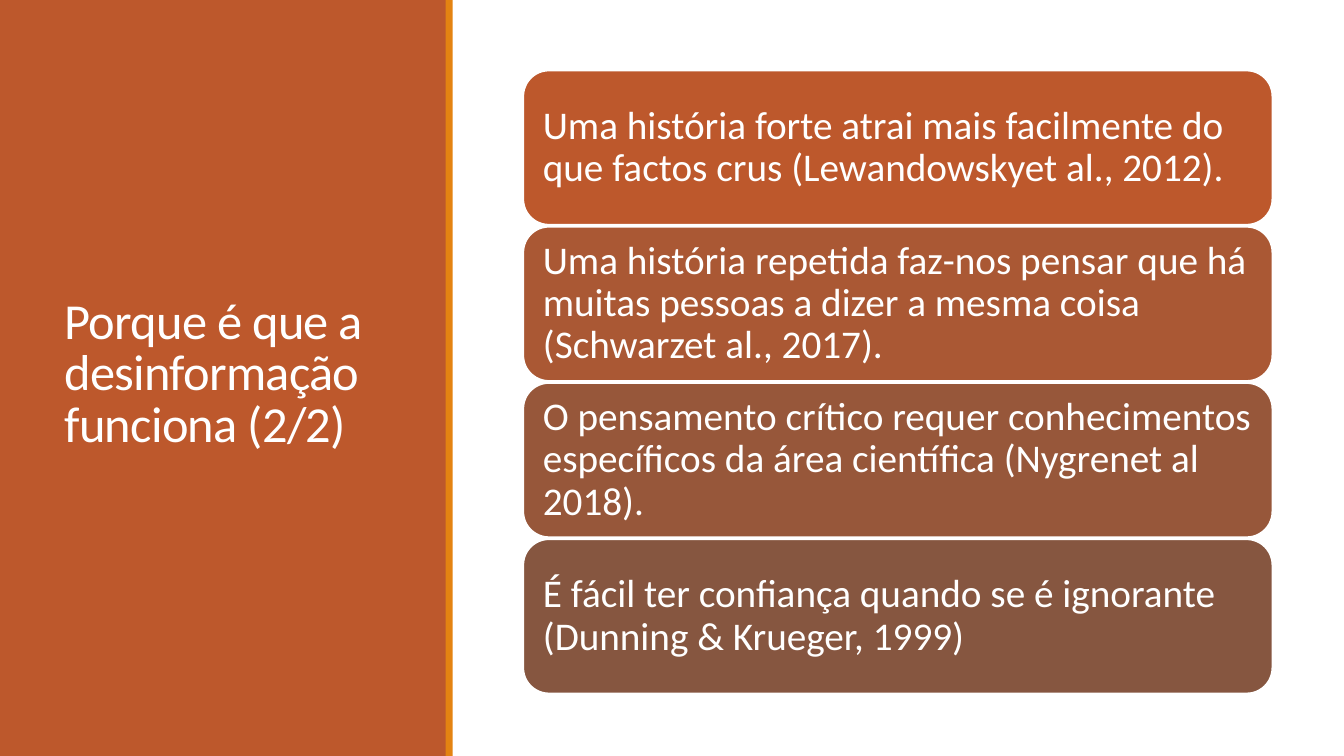
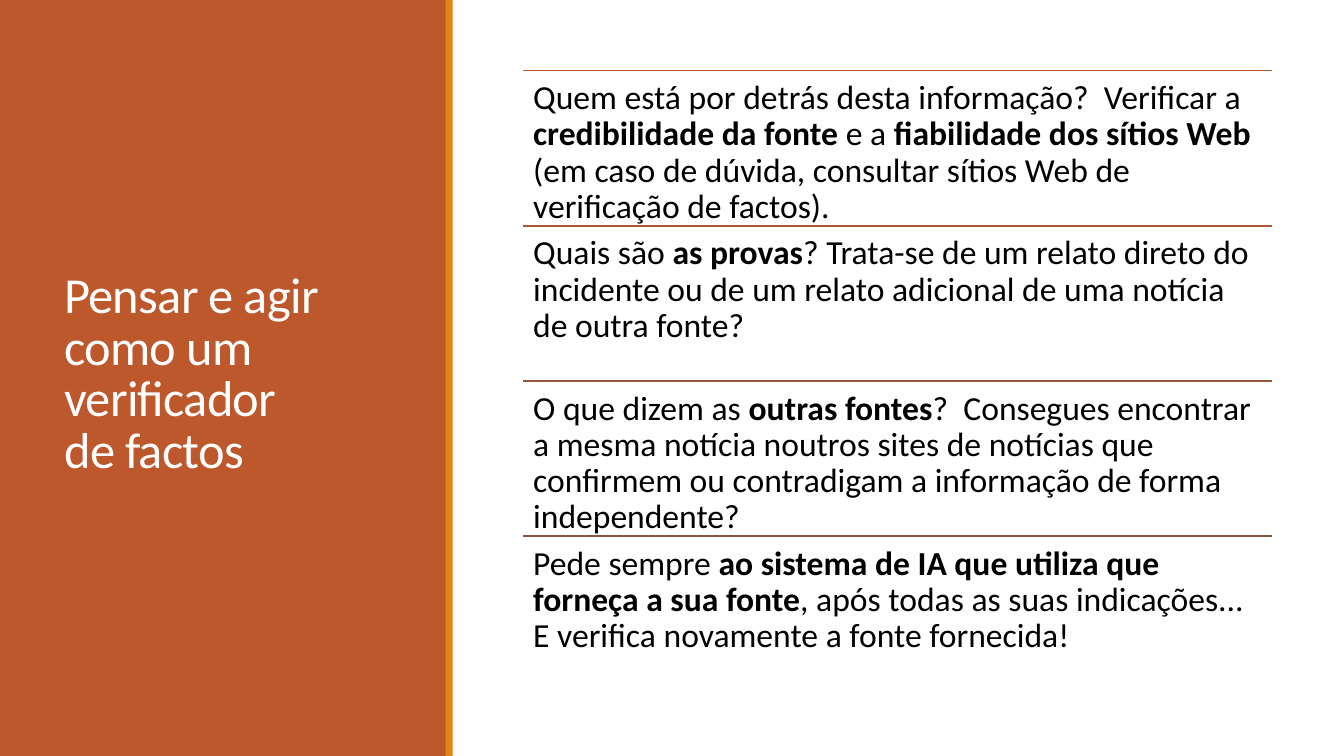
import pptx
import pptx.util
import pptx.dml.color
import pptx.enum.shapes
import pptx.enum.text
import lxml.etree

Inches = pptx.util.Inches
Pt = pptx.util.Pt
SHAPES = pptx.enum.shapes.MSO_SHAPE
ANCHORS = pptx.enum.text.MSO_ANCHOR

FONT = "Calibri"
WHITE, BLACK, RUST, ORANGE = "FFFFFF", "000000", "BD582C", "E48312"
ROW_COLORS = [RUST, "AA5834", "97573A", "865640"]
SLIDE_W, SLIDE_H = 13.33, 7.5
PANEL_W, STRIPE_W = 4.43, 0.07
ROWS_LEFT, ROWS_TOP, ROWS_W = 5.19, 0.7, 7.43
CARD_H, CARD_STEP = 1.53, 1.55
QUESTION_H = 1.54

REASONS_TITLE = ["Porque é que a desinformação funciona (2/2)"]
REASONS = [
    "Uma história forte atrai mais facilmente do que factos crus (Lewandowskyet al., 2012).",
    "Uma história repetida faz-nos pensar que há muitas pessoas a dizer a mesma coisa (Schwarzet al., 2017).",
    "O pensamento crítico requer conhecimentos específicos da área científica (Nygrenet al 2018).",
    "É fácil ter confiança quando se é ignorante (Dunning & Krueger, 1999)",
]

CHECKER_TITLE = ["Pensar e agir como um verificador", "de factos"]
QUESTIONS = [
    [("Quem está por detrás desta informação?  Verificar a ", False),
     ("credibilidade da fonte ", True),
     ("e a ", False),
     ("fiabilidade dos sítios Web ", True),
     ("(em caso de dúvida, consultar sítios Web de verificação de factos).", False)],
    [("Quais são ", False),
     ("as provas", True),
     ("? Trata-se de um relato direto do incidente ou de um relato adicional "
      "de uma notícia de outra fonte?", False)],
    [("O que dizem as ", False),
     ("outras fontes", True),
     ("?  Consegues encontrar a mesma notícia noutros sites de notícias que "
      "confirmem ou contradigam a informação de forma independente?", False)],
    [("Pede sempre ", False),
     ("ao sistema de IA que utiliza que forneça a sua fonte", True),
     (", após todas as suas indicações... E verifica novamente a fonte fornecida!", False)],
]


def rgb(color):
    return pptx.dml.color.RGBColor.from_string(color)


def add_box(slide, preset, left, top, width, height, fill, outline=None):
    box = slide.shapes.add_shape(
        preset, Inches(left), Inches(top), Inches(width), Inches(height))
    box.shadow.inherit = False
    box.fill.solid()
    box.fill.fore_color.rgb = rgb(fill)
    if outline:
        box.line.color.rgb = rgb(outline)
        box.line.width = Pt(1.25)
    else:
        box.line.fill.background()
    return box


def add_text_area(slide, left, top, width, height):
    return slide.shapes.add_textbox(
        Inches(left), Inches(top), Inches(width), Inches(height))


def start_paragraph(shape, inset, anchor, spacing):
    frame = shape.text_frame
    frame.word_wrap = True
    frame.vertical_anchor = anchor
    frame.margin_left = frame.margin_right = Inches(inset)
    frame.margin_top = frame.margin_bottom = Inches(inset)
    paragraph = frame.paragraphs[0]
    paragraph.alignment = pptx.enum.text.PP_ALIGN.LEFT
    paragraph.line_spacing = spacing
    return paragraph


def add_run(paragraph, text, size, color, bold=False):
    run = paragraph.add_run()
    run.text = text
    run.font.name = FONT
    run.font.size = Pt(size)
    run.font.bold = bold
    run.font.color.rgb = rgb(color)
    return run


def add_rule(slide, top, color):
    rule = slide.shapes.add_connector(
        pptx.enum.shapes.MSO_CONNECTOR.STRAIGHT,
        Inches(ROWS_LEFT), Inches(top), Inches(ROWS_LEFT + ROWS_W), Inches(top))
    rule.line.color.rgb = rgb(color)
    rule.line.width = Pt(1.25)
    lxml.etree.SubElement(
        rule._element.spPr, pptx.oxml.ns.qn("a:effectLst"))


def add_panel_slide(deck, title_lines):
    slide = deck.slides.add_slide(deck.slide_layouts[6])
    add_box(slide, SHAPES.RECTANGLE, 0, 0, PANEL_W, SLIDE_H, RUST)
    title = add_text_area(slide, 0.54, 0.57, 3.37, 6.31)
    paragraph = start_paragraph(title, 0.1, ANCHORS.MIDDLE, 0.85)
    for index, line in enumerate(title_lines):
        if index:
            paragraph.add_line_break()
        run = add_run(paragraph, line, 36, WHITE)
        run.font._element.set("spc", "-50")
    add_box(slide, SHAPES.RECTANGLE, 4.42, 0, STRIPE_W, SLIDE_H, ORANGE)
    return slide


def add_reasons(deck):
    slide = add_panel_slide(deck, REASONS_TITLE)
    for index, (reason, color) in enumerate(zip(REASONS, ROW_COLORS)):
        card = add_box(slide, SHAPES.ROUNDED_RECTANGLE, ROWS_LEFT,
                       ROWS_TOP + index * CARD_STEP, ROWS_W, CARD_H, color, WHITE)
        paragraph = start_paragraph(card, 0.12, ANCHORS.MIDDLE, 0.9)
        add_run(paragraph, reason, 28, WHITE)


def add_questions(deck):
    slide = add_panel_slide(deck, CHECKER_TITLE)
    for index, (question, color) in enumerate(zip(QUESTIONS, ROW_COLORS)):
        top = ROWS_TOP + index * QUESTION_H
        add_rule(slide, top, color)
        area = add_text_area(slide, ROWS_LEFT, top, ROWS_W, QUESTION_H)
        paragraph = start_paragraph(area, 0.1, ANCHORS.TOP, 0.9)
        for text, bold in question:
            add_run(paragraph, text, 24, BLACK, bold)


def main():
    deck = pptx.Presentation()
    deck.slide_width = Inches(SLIDE_W)
    deck.slide_height = Inches(SLIDE_H)
    add_reasons(deck)
    add_questions(deck)
    deck.save("out.pptx")


if __name__ == "__main__":
    main()
